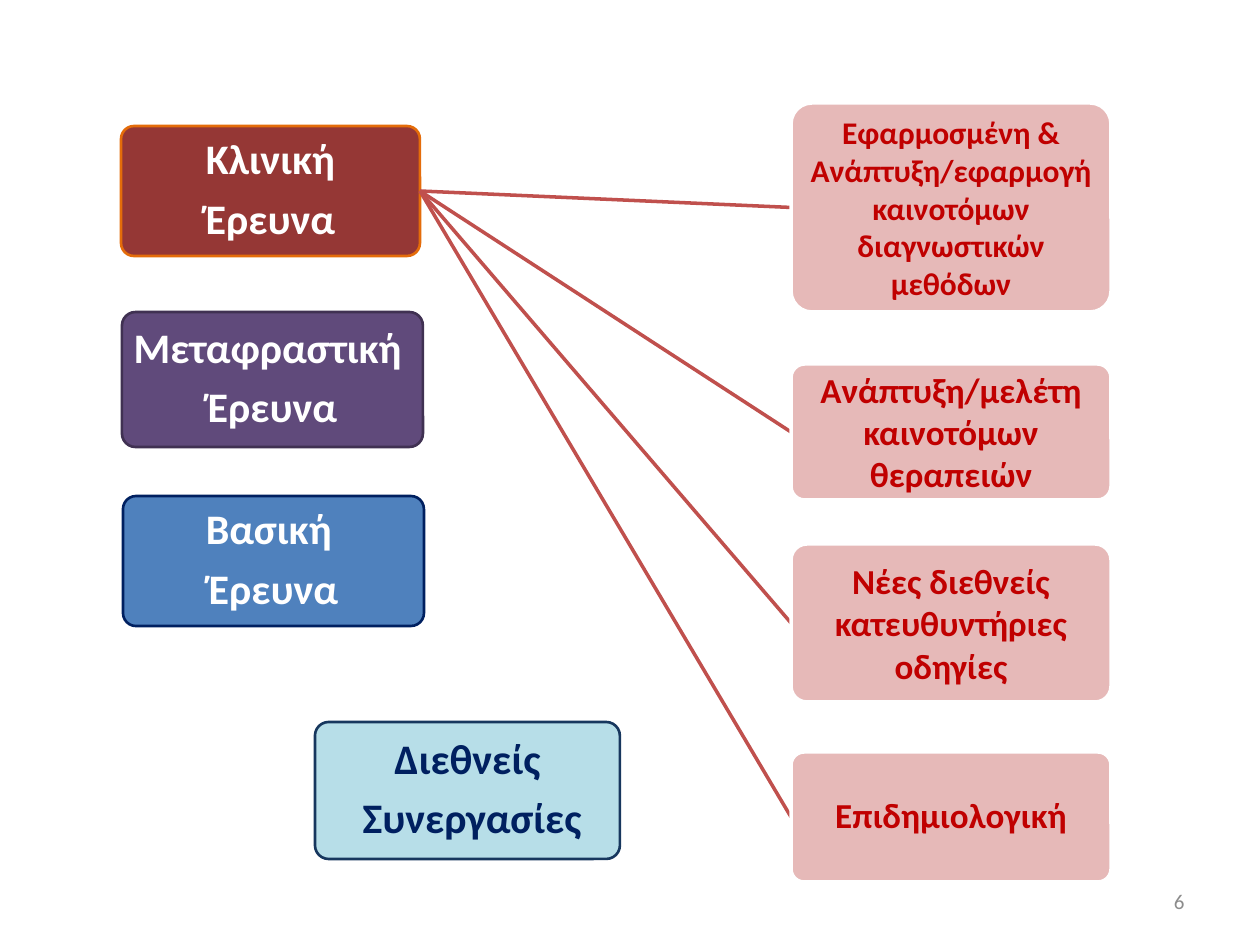
from pptx import Presentation
from pptx.dml.color import RGBColor
from pptx.enum.shapes import MSO_CONNECTOR, MSO_SHAPE
from pptx.enum.text import MSO_ANCHOR, PP_ALIGN
from pptx.oxml.ns import qn
from pptx.util import Pt
from lxml.etree import SubElement

PX_PER_INCH = 126
EMU_PER_PX = 914400 / PX_PER_INCH
RIGHT_SITE, LEFT_SITE = 3, 1

COLORS = {
    "white": "FFFFFF", "navy": "002060", "number": "8C8C8C",
    "ice": "B7DEE8", "ice_edge": "17375E",
    "blue": "4F81BD",
    "purple": "604A7B", "purple_edge": "403152",
    "brick": "953735", "orange": "E46C0A",
    "pink": "E6B9B8", "red": "C00000", "branch": "C0504D",
}

SPACED = {"line_spacing": 0.9, "space_after": Pt(8)}

# box in px, fill, edge, text colour, lines; the last field is the branching source
FIELDS = [
    ((315, 722, 305, 137), "ice", "ice_edge", "navy", ["Διεθνείς", " Συνεργασίες"]),
    ((123, 496, 301, 130), "blue", "navy", "white", ["Βασική ", "Έρευνα"]),
    ((122, 312, 301, 135), "purple", "purple_edge", "white", ["Μεταφραστική ", "Έρευνα"]),
    ((121, 126, 299, 130), "brick", "orange", "white", ["Κλινική", "Έρευνα"]),
]

GOAL_LEFT, GOAL_WIDTH = 791, 320
# top and height in px, text size, paragraph format, lines
GOALS = [
    (103, 209, 18, {}, ["Εφαρμοσμένη &", "Ανάπτυξη/εφαρμογή καινοτόμων διαγνωστικών μεθόδων"]),
    (364, 136, 20, {}, ["Ανάπτυξη/μελέτη καινοτόμων θεραπειών"]),
    (544, 158, 20, {}, ["Νέες διεθνείς κατευθυντήριες οδηγίες"]),
    (752, 130, 20, SPACED, ["Επιδημιολογική"]),
]


def px(length):
    return round(length * EMU_PER_PX)


def rgb(name):
    return RGBColor.from_string(COLORS[name])


def set_all(target, values):
    for attribute, value in values.items():
        setattr(target, attribute, value)


def write(frame, lines, size, color, bold=True, margin=None, **paragraph_format):
    """Fill a text frame with one paragraph per line."""
    set_all(frame, {"word_wrap": True, "vertical_anchor": MSO_ANCHOR.MIDDLE})
    if margin is not None:
        sides = ("left", "top", "right", "bottom")
        set_all(frame, {f"margin_{side}": px(margin) for side in sides})
    for index, line in enumerate(lines):
        paragraph = frame.add_paragraph() if index else frame.paragraphs[0]
        set_all(paragraph, {"alignment": PP_ALIGN.CENTER, **paragraph_format})
        run = paragraph.add_run()
        run.text = line
        set_all(run.font, {"name": "Calibri", "size": Pt(size), "bold": bold})
        run.font.color.rgb = rgb(color)


def add_card(slide, box, fill, edge, edge_width):
    card = slide.shapes.add_shape(MSO_SHAPE.ROUNDED_RECTANGLE, *map(px, box))
    card.adjustments[0] = 0.1
    card.shadow.inherit = False
    card.fill.solid()
    card.fill.fore_color.rgb = rgb(fill)
    card.line.color.rgb = rgb(edge)
    card.line.width = Pt(edge_width)
    return card


def add_field(slide, box, fill, edge, text_color, lines):
    field = add_card(slide, box, fill, edge, 1.5)
    write(field.text_frame, lines, 24, text_color, margin=3, **SPACED)
    return field


def add_branch(slide, source):
    """Start a line at the source; its end is attached to a goal later."""
    branch = slide.shapes.add_connector(MSO_CONNECTOR.STRAIGHT, 0, 0, 0, 0)
    branch.begin_connect(source, RIGHT_SITE)
    branch.line.color.rgb = rgb("branch")
    branch.line.width = Pt(2)
    SubElement(branch._element.spPr, qn("a:effectLst"))
    return branch


def add_goal(slide, source, top, height, size, paragraph_format, lines):
    branch = add_branch(slide, source)  # first, so that it lies behind the goal
    goal = add_card(slide, (GOAL_LEFT, top, GOAL_WIDTH, height), "pink", "white", 2)
    write(goal.text_frame, lines, size, "red", margin=1, **paragraph_format)
    branch.end_connect(goal, LEFT_SITE)


def add_slide_number(slide, number):
    box = slide.shapes.add_textbox(*map(px, (903, 876, 294, 50)))
    write(box.text_frame, [number], 12, "number", bold=False, alignment=PP_ALIGN.RIGHT)


def main():
    deck = Presentation()
    set_all(deck, {"slide_width": px(1260), "slide_height": px(945)})
    slide = deck.slides.add_slide(deck.slide_layouts[6])
    fields = [add_field(slide, *field) for field in FIELDS]
    clinical = fields[-1]
    for goal in GOALS:
        add_goal(slide, clinical, *goal)
    add_slide_number(slide, "6")
    deck.save("out.pptx")


if __name__ == "__main__":
    main()
